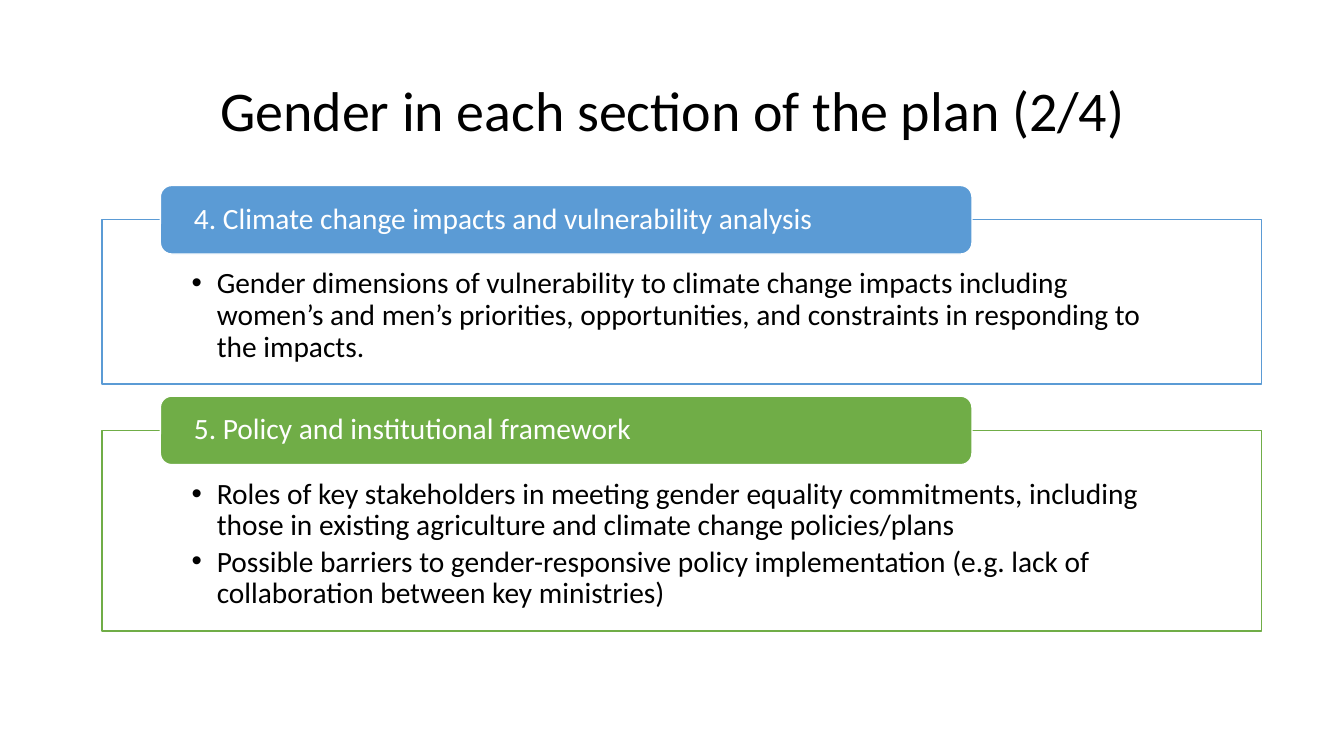
from lxml.etree import SubElement
from pptx import Presentation
from pptx.dml.color import RGBColor
from pptx.enum.shapes import MSO_SHAPE
from pptx.enum.text import MSO_ANCHOR, MSO_AUTO_SIZE, PP_ALIGN
from pptx.oxml.ns import qn
from pptx.util import Inches, Pt

SECTIONS = [
    ("4. Climate change impacts and vulnerability analysis", "5B9BD5", 1.84, 1.63, [
        "Gender dimensions of vulnerability to climate change impacts including women’s and men’s "
        "priorities, opportunities, and constraints in responding to the impacts.",
    ]),
    ("5. Policy and institutional framework", "70AD47", 3.93, 1.99, [
        "Roles of key stakeholders in meeting gender equality commitments, including those in "
        "existing agriculture and climate change policies/plans",
        "Possible barriers to gender-responsive policy implementation (e.g. lack of collaboration "
        "between key ministries)",
    ]),
]


def colour(value):
    """Turn a hex string into a colour."""
    return RGBColor.from_string(value)


class SlideBuilder:
    """Hold the slide and its style, and add each kind of element."""

    font = "Calibri"
    title_size = 40
    text_size = 21
    panel_left = 1.01
    panel_width = 11.5
    panel_drop = 0.34
    tab_left = 1.59
    tab_width = 8.05
    tab_height = 0.68

    def __init__(self, presentation):
        """Add a slide with a title and two body placeholders."""
        self.slide = presentation.slides.add_slide(presentation.slide_layouts[3])

    def place(self, shape, left, top, width, height):
        """Move and size a shape."""
        shape.left, shape.top = Inches(left), Inches(top)
        shape.width, shape.height = Inches(width), Inches(height)

    def paint(self, shape, fill, line):
        """Set the fill and outline of a shape."""
        shape.fill.solid()
        shape.fill.fore_color.rgb = colour(fill)
        shape.line.color.rgb = colour(line)
        shape.line.width = Pt(1)

    def frame(self, shape, anchor, left, top, right, bottom):
        """Set the anchor, wrapping and insets of a text frame."""
        text_frame = shape.text_frame
        text_frame.word_wrap = True
        text_frame.auto_size = MSO_AUTO_SIZE.NONE
        text_frame.vertical_anchor = anchor
        text_frame.margin_left, text_frame.margin_top = Inches(left), Inches(top)
        text_frame.margin_right, text_frame.margin_bottom = Inches(right), Inches(bottom)

    def format(self, paragraph, size, text_colour, alignment=PP_ALIGN.LEFT, space_after=0):
        """Format a paragraph and its runs."""
        paragraph.alignment = alignment
        paragraph.line_spacing = 0.9
        paragraph.space_before = Pt(0)
        paragraph.space_after = Pt(space_after)
        for run in paragraph.runs:
            run.font.name = self.font
            run.font.size = Pt(size)
            run.font.color.rgb = colour(text_colour)

    def title(self, text):
        """Fill the title placeholder."""
        shape = self.slide.shapes.title
        self.place(shape, 0.92, 0.4, 11.5, 1.45)
        shape.text_frame.text = text
        self.frame(shape, MSO_ANCHOR.MIDDLE, 0.1, 0.05, 0.1, 0.05)
        self.format(shape.text_frame.paragraphs[0], self.title_size, "000000", PP_ALIGN.CENTER)

    def panel(self, index, top, height, accent, items):
        """Turn a body placeholder into an outlined bullet list."""
        shape = self.slide.placeholders[index]
        self.place(shape, self.panel_left, top + self.panel_drop, self.panel_width, height)
        self.paint(shape, "FFFFFF", accent)
        shape.text_frame.text = "\n".join(items)
        self.frame(shape, MSO_ANCHOR.TOP, 0.89, 0.48, 0.89, 0.16)
        for paragraph in shape.text_frame.paragraphs:
            self.format(paragraph, self.text_size, "000000", space_after=3.15)
            properties = paragraph._p.get_or_add_pPr()
            properties.set("marL", str(Inches(0.25)))
            properties.set("indent", str(-Inches(0.25)))
            SubElement(properties, qn("a:buChar"), char="•")

    def tab(self, top, accent, text):
        """Add a rounded heading tab."""
        shape = self.slide.shapes.add_shape(
            MSO_SHAPE.ROUNDED_RECTANGLE, Inches(self.tab_left), Inches(top),
            Inches(self.tab_width), Inches(self.tab_height))
        shape.shadow.inherit = False
        self.paint(shape, accent, "FFFFFF")
        shape.text_frame.text = text
        self.frame(shape, MSO_ANCHOR.MIDDLE, 0.3, 0, 0.3, 0)
        self.format(shape.text_frame.paragraphs[0], self.text_size, "FFFFFF")


def main():
    """Build and save the presentation."""
    presentation = Presentation()
    presentation.slide_width = Inches(13.33)
    presentation.slide_height = Inches(7.5)
    builder = SlideBuilder(presentation)
    builder.title("Gender in each section of the plan (2/4)")
    for index, (heading, accent, top, height, items) in enumerate(SECTIONS, start=1):
        builder.panel(index, top, height, accent, items)
        builder.tab(top, accent, heading)
    presentation.save("out.pptx")


if __name__ == "__main__":
    main()
